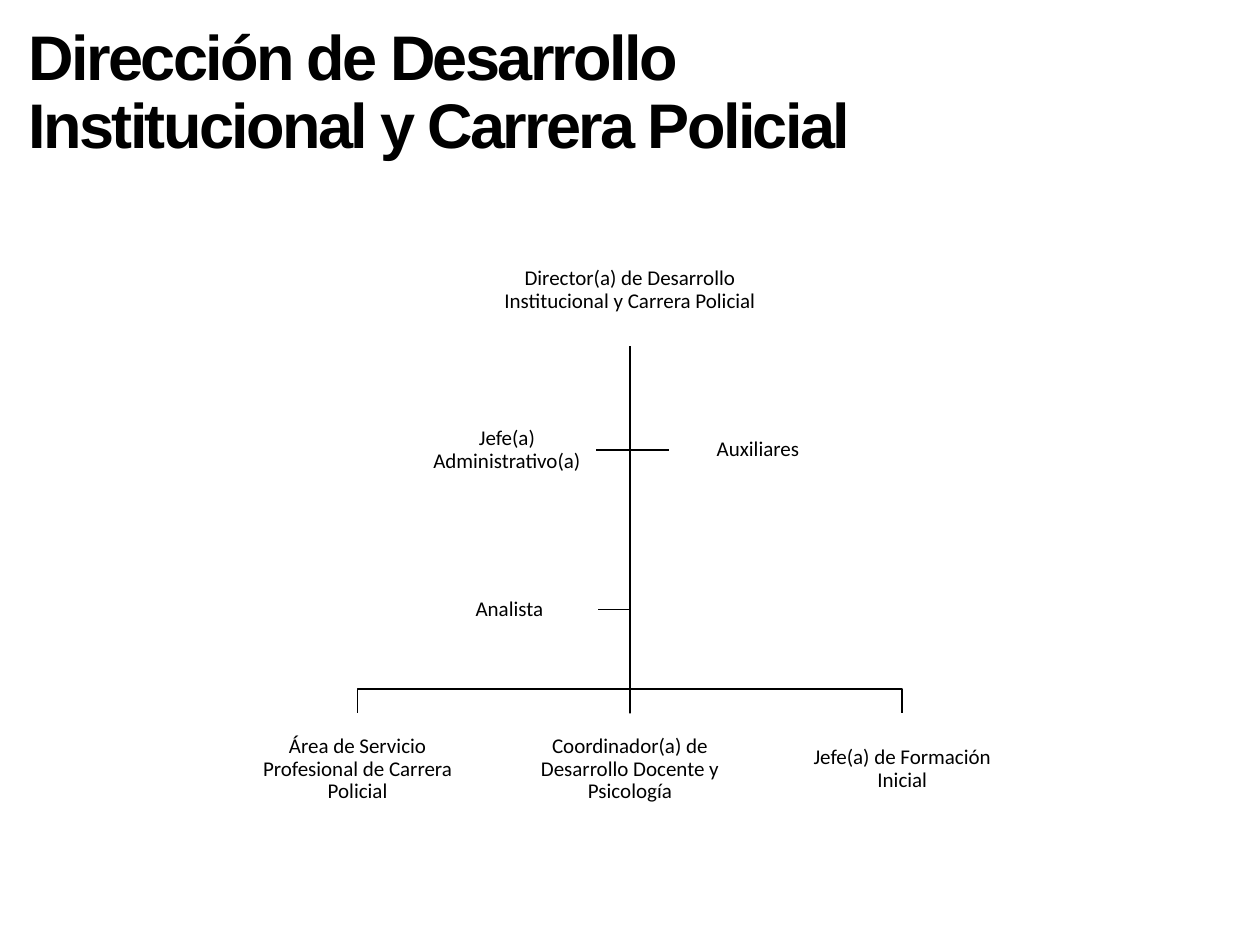
from lxml.etree import SubElement
from pptx import Presentation
from pptx.dml.color import RGBColor
from pptx.enum.shapes import MSO_CONNECTOR, MSO_SHAPE
from pptx.enum.text import MSO_ANCHOR, MSO_AUTO_SIZE, PP_ALIGN
from pptx.oxml.ns import qn
from pptx.util import Cm, Pt

BLACK = RGBColor(0, 0, 0)
WHITE = RGBColor(255, 255, 255)

prs = Presentation()
prs.slide_width, prs.slide_height = Cm(25.4), Cm(19.05)
s = prs.slides.add_slide(prs.slide_layouts[6])


def set_text(sp, text, font="Calibri", size=12, bold=False, spacing=None,
             align=PP_ALIGN.CENTER, anchor=MSO_ANCHOR.MIDDLE, inset=None):
    tf = sp.text_frame
    tf.word_wrap = True
    tf.vertical_anchor = anchor
    if inset is not None:
        tf.margin_left = tf.margin_right = tf.margin_top = tf.margin_bottom = inset
    p = tf.paragraphs[0]
    p.alignment = align
    p.line_spacing = 0.9
    r = p.add_run()
    r.text = text
    r.font.name, r.font.size, r.font.bold = font, Pt(size), bold
    r.font.color.rgb = BLACK
    if spacing is not None:
        r.font._element.set("spc", str(int(spacing * 100)))


# Chart geometry, in centimetres
MID = 12.7
TOP_W, UNIT_W, STAFF_W = 5.59, 4.52, 3.58
BOX_H, STAFF_H = 2.26, 1.88
TOP_Y, UNIT_Y, BAR_Y = 4.72, 14.38, 13.89
UNIT_STEP = 5.49
START_Y = TOP_Y + BOX_H

# Boxes: text, left, top, width, height
boxes = [
    ("Director(a) de Desarrollo Institucional y Carrera Policial",
     MID - TOP_W / 2, TOP_Y, TOP_W, BOX_H),
    ("Jefe(a) Administrativo(a)", 8.43, 8.13, STAFF_W, STAFF_H),
    ("Auxiliares", 13.49, 8.13, STAFF_W, STAFF_H),
    ("Analista", 8.48, 11.35, STAFF_W, STAFF_H),
]
units = ["Área de Servicio Profesional de Carrera Policial",
         "Coordinador(a) de Desarrollo Docente y Psicología",
         "Jefe(a) de Formación Inicial"]
for i, text in enumerate(units):
    left = MID + (i - 1) * UNIT_STEP - UNIT_W / 2
    boxes.append((text, left, UNIT_Y, UNIT_W, BOX_H))

shapes = []
for text, *place in boxes:
    sp = s.shapes.add_shape(MSO_SHAPE.RECTANGLE, *map(Cm, place))
    sp.shadow.inherit = False
    sp.fill.solid()
    sp.fill.fore_color.rgb = WHITE
    sp.line.fill.background()
    set_text(sp, text, inset=Cm(0.03))
    shapes.append(sp)

# Bent branches, each starting below the director
branches = []
for _, left, top, width, height in boxes[1:4]:
    y = top + height / 2
    edge = left + width if left < MID - 1 else left
    branches.append([(MID, y), (edge, y)])
for x in (MID - UNIT_STEP, MID + UNIT_STEP):
    branches.append([(MID, BAR_Y), (x, BAR_Y), (x, UNIT_Y)])

for points in branches:
    fb = s.shapes.build_freeform(Cm(MID), Cm(START_Y))
    fb.add_line_segments([(Cm(x), Cm(y)) for x, y in points], close=False)
    sp = fb.convert_to_shape()
    sp.shadow.inherit = False
    sp.fill.background()
    sp.line.color.rgb = BLACK
    sp.line.width = Pt(1)

# Straight branch from the director to the middle unit
cx = s.shapes.add_connector(MSO_CONNECTOR.STRAIGHT, Cm(MID), Cm(START_Y),
                            Cm(MID), Cm(UNIT_Y))
cx.begin_connect(shapes[0], 2)
cx.end_connect(shapes[5], 0)
cx.line.color.rgb = BLACK
cx.line.width = Pt(1)
SubElement(cx._element.spPr, qn("a:effectLst"))

# Title
sp = s.shapes.add_textbox(Cm(0.33), Cm(0.41), Cm(18.95), Cm(3.02))
set_text(sp, "Dirección de Desarrollo Institucional y Carrera Policial",
         font="Arial", size=36, bold=True, spacing=-1.5,
         align=PP_ALIGN.LEFT, anchor=MSO_ANCHOR.TOP)
sp.text_frame.auto_size = MSO_AUTO_SIZE.SHAPE_TO_FIT_TEXT

prs.save("out.pptx")
